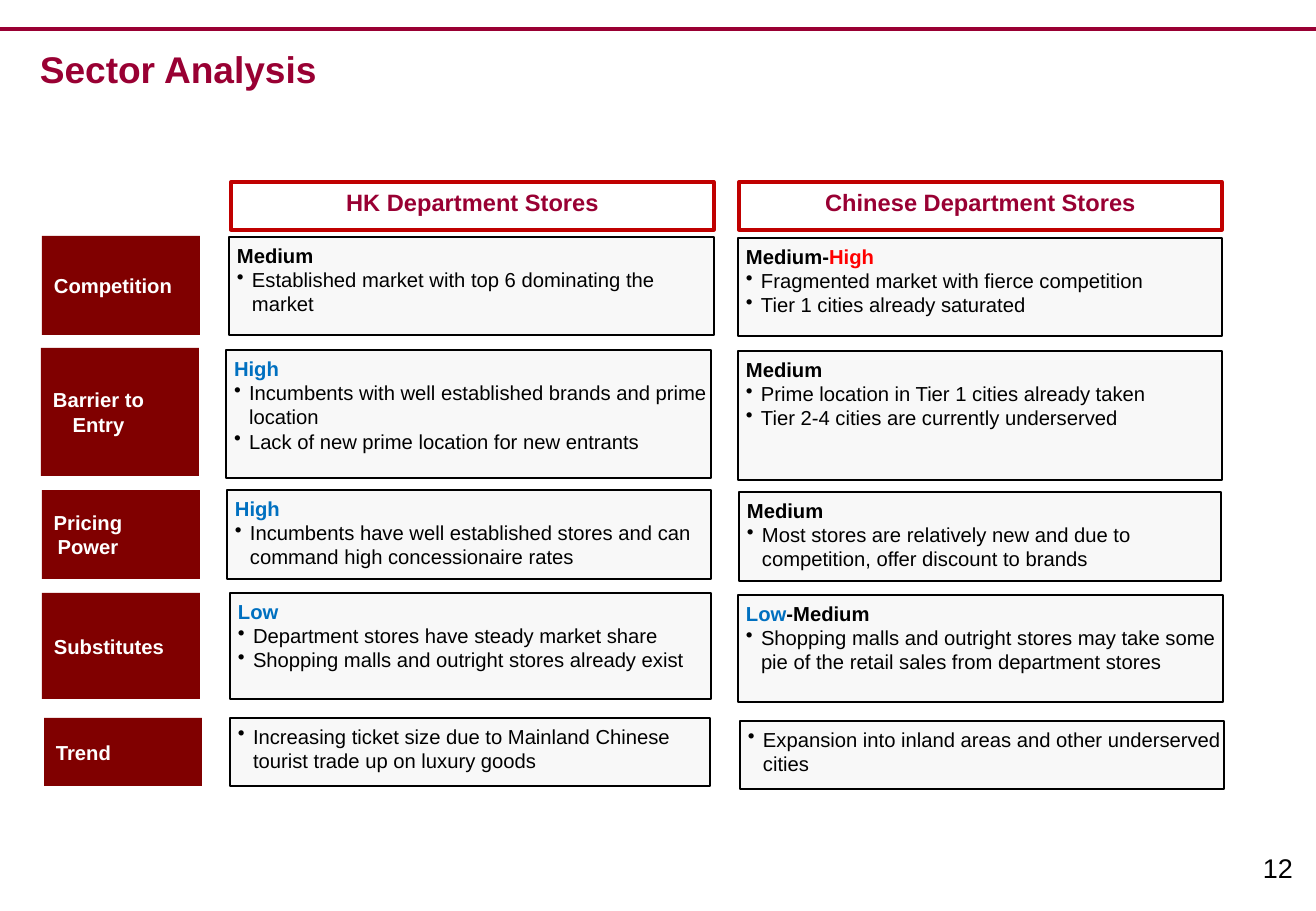
import pptx
import pptx.util
import pptx.dml.color
import pptx.enum.shapes
import pptx.enum.text
import pptx.oxml.ns
import lxml.etree

RGBColor = pptx.dml.color.RGBColor
ALIGN = pptx.enum.text.PP_ALIGN
ANCHOR = pptx.enum.text.MSO_ANCHOR
qn = pptx.oxml.ns.qn

PX = 914400 / 121.5
CRIMSON = RGBColor(0x99, 0x00, 0x33)
MAROON = RGBColor(0x80, 0x00, 0x00)
BORDER_RED = RGBColor(0xC0, 0x00, 0x00)
RED = RGBColor(0xFF, 0x00, 0x00)
BLUE = RGBColor(0x00, 0x70, 0xC0)
PALE = RGBColor(0xF8, 0xF8, 0xF8)
WHITE = RGBColor(0xFF, 0xFF, 0xFF)
BLACK = RGBColor(0x00, 0x00, 0x00)

presentation = pptx.Presentation()
presentation.slide_width = round(1316 * PX)
presentation.slide_height = round(911 * PX)
slide = presentation.slides.add_slide(presentation.slide_layouts[6])


def add_box(place, fill, line_color=None, line_width=0.75):
    """Add a shadowless rectangle, placed in px, and return it."""
    shape = slide.shapes.add_shape(
        pptx.enum.shapes.MSO_SHAPE.RECTANGLE, *[round(n * PX) for n in place])
    shape.shadow.inherit = False
    shape.fill.solid()
    shape.fill.fore_color.rgb = fill
    if line_color is None:
        shape.line.fill.background()
    else:
        shape.line.color.rgb = line_color
        shape.line.width = pptx.util.Pt(line_width)
    frame = shape.text_frame
    frame.word_wrap = True
    frame.margin_left = frame.margin_right = 0
    frame.margin_top = frame.margin_bottom = round(6 * PX)
    frame.vertical_anchor = ANCHOR.TOP
    return shape


def add_run(paragraph, text, size, color, bold=False):
    run = paragraph.add_run()
    run.text = text
    run.font.name = "Arial"
    run.font.size = pptx.util.Pt(size)
    run.font.bold = bold
    run.font.color.rgb = color


# Top rule, title and page number
rule = slide.shapes.add_connector(
    pptx.enum.shapes.MSO_CONNECTOR.STRAIGHT,
    0, round(29 * PX), presentation.slide_width, round(29 * PX))
rule.line.color.rgb = CRIMSON
rule.line.width = pptx.util.Pt(2.25)
lxml.etree.SubElement(rule._element.spPr, qn("a:effectLst"))

for place, text, size, color, bold, spacing in [
    ((28, 44, 1199, 152), "Sector Analysis", 22, CRIMSON, True, 0.95),
    ((1251, 846, 55, 45), "12", 16, BLACK, False, 1.0),
]:
    text_box = slide.shapes.add_textbox(*[round(n * PX) for n in place])
    text_box.text_frame.word_wrap = bold
    paragraph = text_box.text_frame.paragraphs[0]
    paragraph.line_spacing = spacing
    add_run(paragraph, text, size, color, bold)

# Column headers
for left, text in [(231, "HK Department Stores"), (739, "Chinese Department Stores")]:
    header = add_box((left, 182, 483, 48), WHITE, BORDER_RED, 2)
    paragraph = header.text_frame.paragraphs[0]
    paragraph.alignment = ALIGN.CENTER
    add_run(paragraph, text, 14, CRIMSON, True)

# Row labels: place, width of the text area, text
LABEL_WIDTH = 158
labels = [
    (42, 236, 99, 142, "Competition"),
    (41, 348, 128, 115, "Barrier to Entry"),
    (42, 490, 89, 92, "Pricing Power"),
    (42, 593, 106, 134, "Substitutes"),
    (44, 718, 68, 79, "Trend"),
]
for left, top, height, text_width, text in labels:
    label = add_box((left, top, LABEL_WIDTH, height), MAROON)
    label.text_frame.margin_right = round((LABEL_WIDTH - text_width) * PX)
    label.text_frame.vertical_anchor = ANCHOR.MIDDLE
    paragraph = label.text_frame.paragraphs[0]
    paragraph.alignment = ALIGN.CENTER
    add_run(paragraph, text, 12, WHITE, True)

# Assessments: place, rating runs, bullet points
assessments = [
    ((229, 237, 485, 98), [("Medium", BLACK)],
     ["Established market with top 6 dominating the market"]),
    ((738, 238, 484, 98), [("Medium-", BLACK), ("High", RED)],
     ["Fragmented market with fierce competition",
      "Tier 1 cities already saturated"]),
    ((226, 350, 485, 128), [("High", BLUE)],
     ["Incumbents with well established brands and prime location",
      "Lack of new prime location for new entrants"]),
    ((738, 351, 484, 129), [("Medium", BLACK)],
     ["Prime location in Tier 1 cities already taken",
      "Tier 2-4 cities are currently underserved"]),
    ((227, 490, 484, 89), [("High", BLUE)],
     ["Incumbents have well established stores and can command high concessionaire rates"]),
    ((739, 492, 482, 89), [("Medium", BLACK)],
     ["Most stores are relatively new and due to competition, offer discount to brands"]),
    ((230, 593, 481, 106), [("Low", BLUE)],
     ["Department stores have steady market share",
      "Shopping malls and outright stores already exist"]),
    ((738, 595, 485, 107), [("Low", BLUE), ("-Medium", BLACK)],
     ["Shopping malls and outright stores may take some pie of the retail sales "
      "from department stores"]),
    ((230, 718, 480, 68), [],
     ["Increasing ticket size due to Mainland Chinese tourist trade up on luxury goods"]),
    ((740, 721, 484, 68), [],
     ["Expansion into inland areas and other underserved cities"]),
]
for place, rating, points in assessments:
    frame = add_box(place, PALE, BLACK).text_frame
    lines = [(rating, True)] if rating else []
    lines += [([(point, BLACK)], False) for point in points]
    for index, (runs, is_rating) in enumerate(lines):
        paragraph = frame.add_paragraph() if index else frame.paragraphs[0]
        paragraph.alignment = ALIGN.LEFT
        properties = paragraph._p.get_or_add_pPr()
        properties.set("marL", str(round(23 * PX)))
        properties.set("indent", str(round(-15 * PX)))
        if is_rating:
            lxml.etree.SubElement(properties, qn("a:buNone"))
        else:
            lxml.etree.SubElement(properties, qn("a:buChar")).set("char", "•")
        for text, color in runs:
            add_run(paragraph, text, 12, color, is_rating)

presentation.save("out.pptx")
